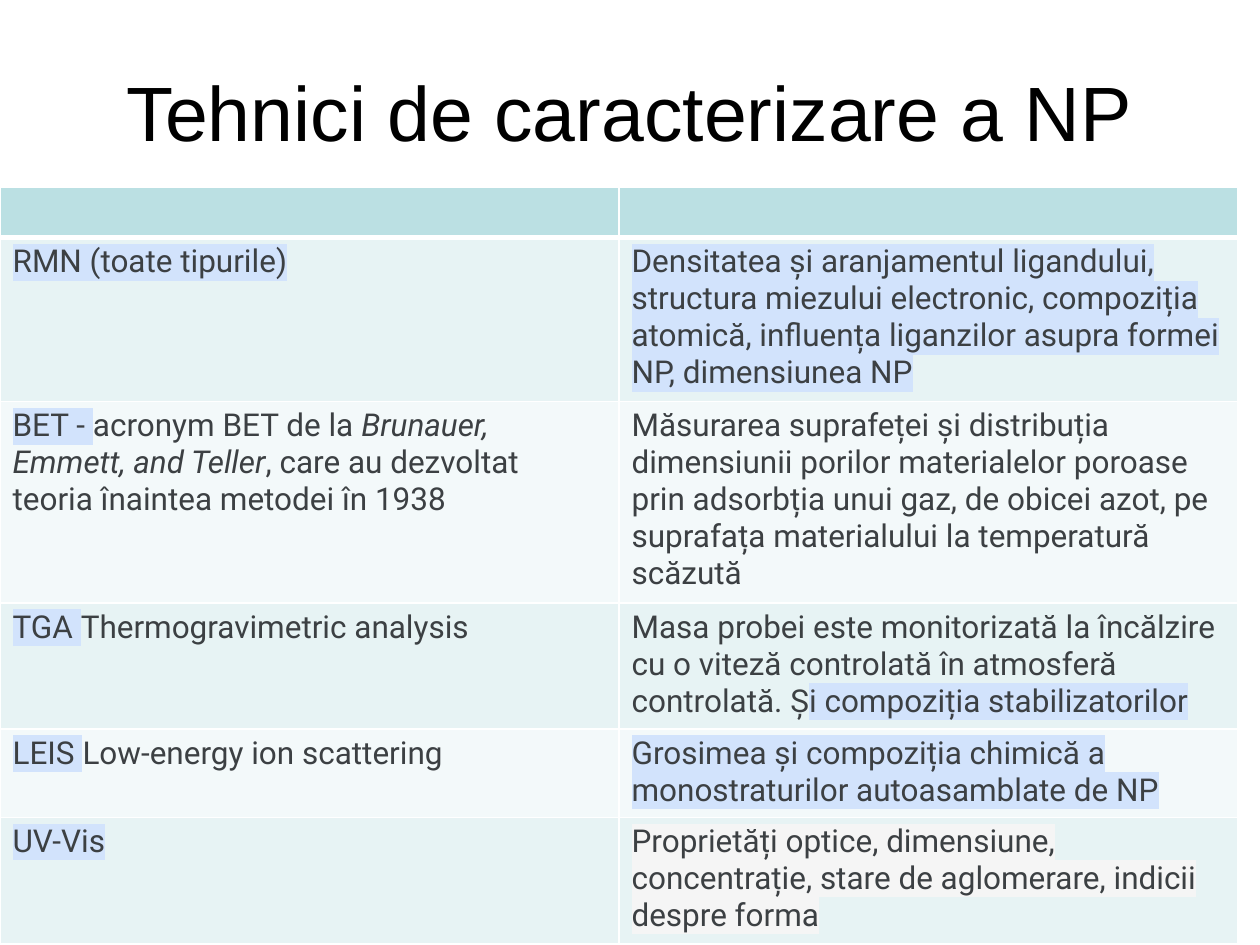
from lxml import etree
from pptx import Presentation
from pptx.dml.color import RGBColor
from pptx.enum.text import MSO_ANCHOR, PP_ALIGN
from pptx.oxml.ns import qn
from pptx.util import Pt

CENTER = PP_ALIGN.CENTER
MIDDLE = MSO_ANCHOR.MIDDLE

PX = 914400 / 126
BLACK = RGBColor(0x00, 0x00, 0x00)
WHITE = RGBColor(0xFF, 0xFF, 0xFF)
TEXT_GREY = RGBColor(0x3C, 0x40, 0x43)
HEADER_FILL = RGBColor(0xBB, 0xE0, 0xE3)
BAND_FILLS = (RGBColor(0xE7, 0xF3, 0xF4), RGBColor(0xF3, 0xF9, 0xFA))
BLUE_MARK = RGBColor(0xD2, 0xE3, 0xFC)
GREY_MARK = RGBColor(0xF5, 0xF5, 0xF5)

COLUMN_WIDTH = 619
ROW_HEIGHTS = (50, 161, 197, 124, 87, 122)

# Each cell is a list of runs: text, highlight, italic
TECHNIQUES = [
    ([("RMN (toate tipurile)", BLUE_MARK, False)],
     [("Densitatea și aranjamentul ligandului, structura miezului electronic, "
       "compoziția atomică, influența liganzilor asupra formei NP, "
       "dimensiunea NP", BLUE_MARK, False)]),
    ([("BET - ", BLUE_MARK, False),
      ("acronym BET de la ", None, False),
      ("Brunauer, Emmett, and Teller", None, True),
      (", care au dezvoltat teoria înaintea metodei în 1938", None, False)],
     [("Măsurarea suprafeței și distribuția dimensiunii porilor materialelor "
       "poroase prin adsorbția unui gaz, de obicei azot, pe suprafața "
       "materialului la temperatură scăzută", None, False)]),
    ([("TGA ", BLUE_MARK, False),
      ("Thermogravimetric analysis", None, False)],
     [("Masa probei este monitorizată la încălzire cu o viteză controlată "
       "în atmosferă controlată. Ș", None, False),
      ("i compoziția stabilizatorilor", BLUE_MARK, False)]),
    ([("LEIS ", BLUE_MARK, False),
      ("Low-energy ion scattering", None, False)],
     [("Grosimea și compoziția chimică a monostraturilor autoasamblate de NP",
       BLUE_MARK, False)]),
    ([("UV-Vis", BLUE_MARK, False)],
     [("Proprietăți optice, dimensiune, concentrație, stare de aglomerare, "
       "indicii despre forma", GREY_MARK, False)]),
]


def px(value):
    return round(value * PX)


def add_color(parent, color):
    etree.SubElement(parent, qn("a:srgbClr"), val=str(color))


def add_run(paragraph, text, font_name, size, color, highlight=None, italic=False):
    run = paragraph.add_run()
    run.text = text
    run.font.size = Pt(size)
    run.font.italic = italic
    run.font.color.rgb = color
    if highlight is not None:
        properties = run.font.fill._xPr
        add_color(etree.SubElement(properties, qn("a:highlight")), highlight)
    run.font.name = font_name


def add_title(slide, text):
    shape = slide.shapes.add_textbox(px(63), px(32), px(1134), px(157))
    frame = shape.text_frame
    frame.word_wrap = True
    frame.vertical_anchor = MIDDLE
    paragraph = frame.paragraphs[0]
    paragraph.alignment = CENTER
    add_run(paragraph, text, "Arial", 44, BLACK)


def style_cell(cell, fill, top_width=1, bottom_width=1):
    properties = cell._tc.get_or_add_tcPr()
    widths = {"a:lnL": 1, "a:lnR": 1, "a:lnT": top_width, "a:lnB": bottom_width}
    for tag, width in widths.items():
        line = etree.SubElement(properties, qn(tag), w=str(Pt(width)))
        add_color(etree.SubElement(line, qn("a:solidFill")), WHITE)
    cell.fill.solid()
    cell.fill.fore_color.rgb = fill


def add_technique_table(slide):
    table = slide.shapes.add_table(
        len(ROW_HEIGHTS), 2, 0, px(187),
        px(2 * COLUMN_WIDTH), px(sum(ROW_HEIGHTS))).table
    for column in table.columns:
        column.width = px(COLUMN_WIDTH)
    for row, height in zip(table.rows, ROW_HEIGHTS):
        row.height = px(height)

    # Empty header row with a thick rule under it
    for cell in table.rows[0].cells:
        style_cell(cell, HEADER_FILL, bottom_width=3)

    # Banded body rows
    for index, technique in enumerate(TECHNIQUES):
        for cell, runs in zip(table.rows[index + 1].cells, technique):
            style_cell(cell, BAND_FILLS[index % 2], top_width=3 if index == 0 else 1)
            paragraph = cell.text_frame.paragraphs[0]
            for text, highlight, italic in runs:
                add_run(paragraph, text, "Roboto", 18, TEXT_GREY, highlight, italic)


def main():
    presentation = Presentation()
    presentation.slide_width = px(1260)
    presentation.slide_height = px(945)
    slide = presentation.slides.add_slide(presentation.slide_layouts[6])
    add_title(slide, "Tehnici de caracterizare a NP")
    add_technique_table(slide)
    presentation.save("out.pptx")


if __name__ == "__main__":
    main()
